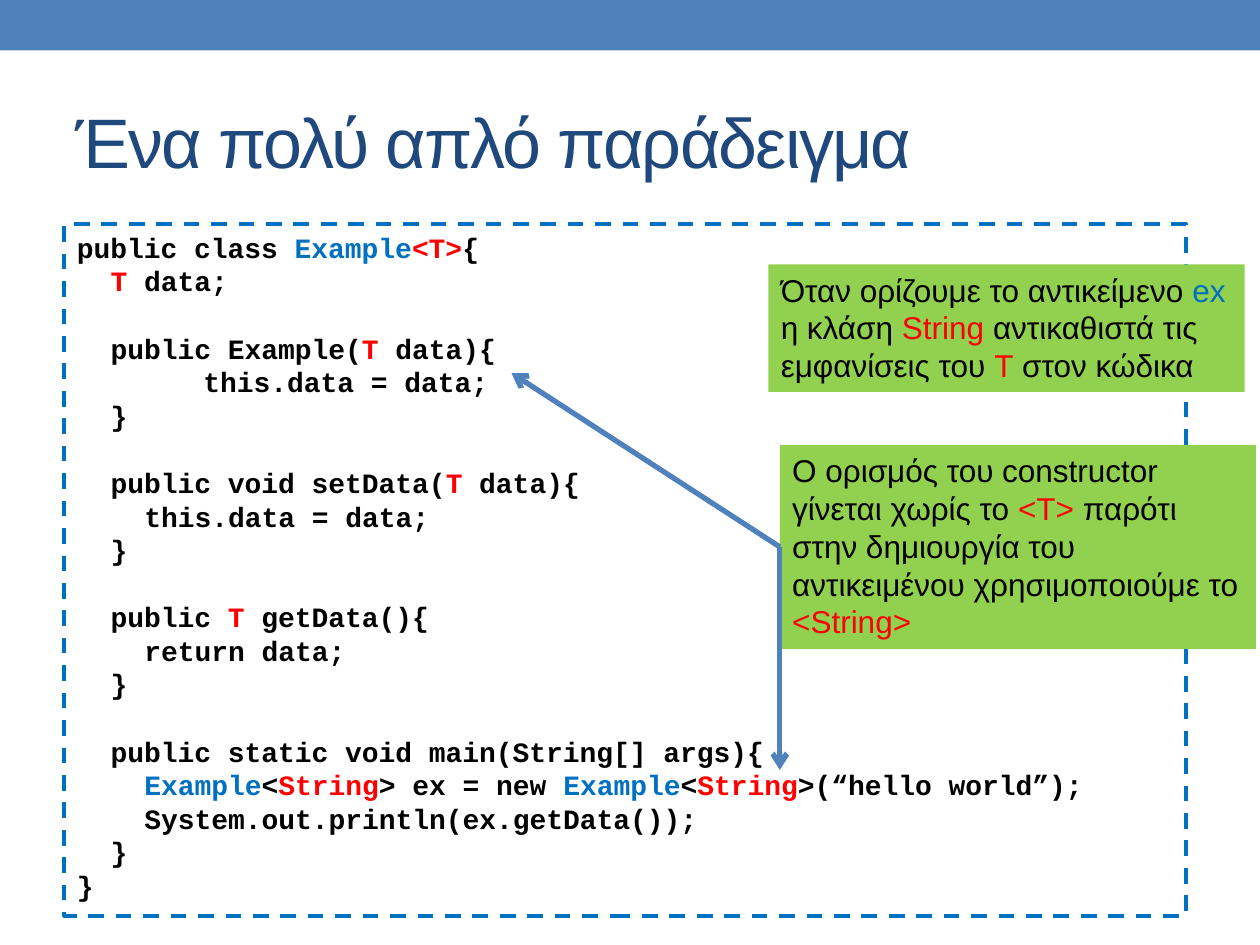
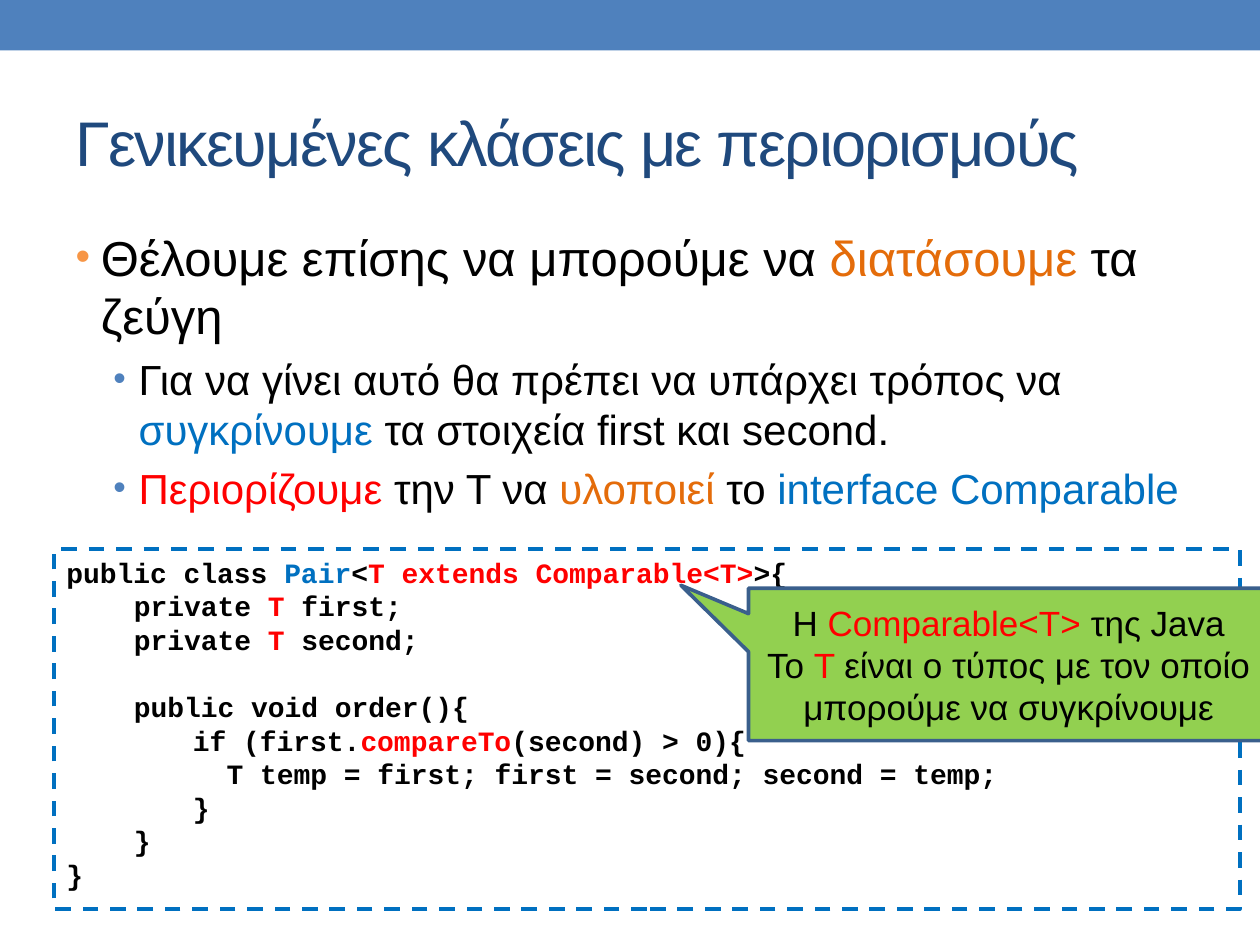
from lxml import etree
from pptx import Presentation
from pptx.dml.color import RGBColor
from pptx.enum.dml import MSO_LINE
from pptx.enum.shapes import MSO_CONNECTOR, MSO_SHAPE
from pptx.enum.text import MSO_ANCHOR, MSO_AUTO_SIZE, PP_ALIGN
from pptx.oxml.ns import qn
from pptx.util import Cm, Pt

RECT, CALLOUT = MSO_SHAPE.RECTANGLE, MSO_SHAPE.RECTANGULAR_CALLOUT
STRAIGHT, DASH = MSO_CONNECTOR.STRAIGHT, MSO_LINE.DASH
TOP, MIDDLE = MSO_ANCHOR.TOP, MSO_ANCHOR.MIDDLE
LEFT, CENTER = PP_ALIGN.LEFT, PP_ALIGN.CENTER
NO_FIT = MSO_AUTO_SIZE.NONE
TITLE_ONLY, TITLE_AND_BODY = 5, 1
LEFT_SIDE = 1

BAND, NAVY, BLUE, GREEN = "4F81BD", "1F497D", "0070C0", "92D050"
CALLOUT_EDGE, BULLET_ORANGE = "3A5F8C", "F79646"
# Text markup: "|" and one of these letters start a run of that colour
INKS = {"k": "000000", "b": BLUE, "r": "FF0000", "o": "E46C0A", "n": NAVY}
CODE_COLUMN = 0.34  # width in cm of one character of code
TAB = 7.5           # columns before a tab stop
LINE_PITCH = 1.2    # line height per point of text


def colour(hex_string):
    return RGBColor.from_string(hex_string)


def apply(target, formats):
    for name, value in formats.items():
        setattr(target, name, value)


def add_xml(parent, tag, **attributes):
    return etree.SubElement(parent, qn(tag), attributes)


class Deck:
    def __init__(self):
        self.prs = Presentation()
        apply(self.prs, {"slide_width": Cm(25.4), "slide_height": Cm(19.05)})
        self.slide = None

    def new_slide(self, layout, title, size):
        self.slide = self.prs.slides.add_slide(self.prs.slide_layouts[layout])
        self.box((0, 0, 25.4, 1.02), fill=BAND)
        heading = self.slide.shapes.title
        self.place(heading, (1.27, 1.47, 22.86, 2.74))
        self.frame(heading, MIDDLE)
        paragraph = heading.text_frame.paragraphs[0]
        self.fill_text(paragraph, "|n" + title, size)
        for run in paragraph.runs:
            run.font._element.set("spc", "-100")

    def place(self, shape, area):
        apply(shape, dict(zip(("left", "top", "width", "height"), map(Cm, area))))

    def frame(self, shape, anchor=TOP):
        apply(shape.text_frame, {"word_wrap": True, "auto_size": NO_FIT,
                                 "vertical_anchor": anchor})

    def fill_text(self, paragraph, marked_text, size, font="Arial", bold=False,
                  align=LEFT, before=0):
        apply(paragraph, {"alignment": align, "space_before": Pt(before),
                          "line_spacing": Pt(size * LINE_PITCH)})
        if not marked_text.startswith("|"):
            marked_text = "|k" + marked_text
        for part in marked_text.split("|")[1:]:
            run = paragraph.add_run()
            run.text = part[1:]
            apply(run.font, {"name": font, "size": Pt(size), "bold": bold})
            run.font.color.rgb = colour(INKS[part[0]])

    def paragraphs(self, shape, count):
        text = shape.text_frame
        return [text.paragraphs[0]] + [text.add_paragraph() for _ in range(count - 1)]

    def box(self, area, kind=RECT, fill=None, edge=None, width=2.25):
        shape = self.slide.shapes.add_shape(kind, *map(Cm, area))
        shape.shadow.inherit = False
        if fill:
            shape.fill.solid()
            shape.fill.fore_color.rgb = colour(fill)
        else:
            shape.fill.background()
        if edge:
            shape.line.color.rgb = colour(edge)
            shape.line.width = Pt(width)
        else:
            shape.line.fill.background()
        self.frame(shape)
        return shape

    def code(self, area, rows):
        """Rows are (indent in columns, marked text); None leaves a line free."""
        listing = self.box(area, edge=BLUE)
        listing.line.dash_style = DASH
        size, gap = 16, 0
        lines = iter(self.paragraphs(listing, len(rows) - rows.count(None)))
        for row in rows:
            if row is None:
                gap = size * LINE_PITCH
                continue
            columns, text = row
            line = next(lines)
            self.fill_text(line, text, size, "Courier New", True, before=gap)
            line._p.get_or_add_pPr().set("marL", str(Cm(columns * CODE_COLUMN)))
            gap = 0

    def note(self, area, text):
        note = self.box(area, fill=GREEN)
        self.fill_text(note.text_frame.paragraphs[0], text, 18)
        return note

    def callout(self, area, tip, texts):
        callout = self.box(area, CALLOUT, GREEN, CALLOUT_EDGE, 2.08)
        for index, value in enumerate(tip):
            callout.adjustments[index] = value
        self.frame(callout, MIDDLE)
        for paragraph, text in zip(self.paragraphs(callout, len(texts)), texts):
            self.fill_text(paragraph, text, 20, align=CENTER)

    def arrow(self, source, start, end):
        arrow = self.slide.shapes.add_connector(STRAIGHT, *map(Cm, start + end))
        arrow.begin_connect(source, LEFT_SIDE)
        arrow.line.color.rgb = colour(BAND)
        arrow.line.width = Pt(3)
        properties = arrow._element.spPr
        add_xml(properties.find(qn("a:ln")), "a:tailEnd", type="arrow")
        add_xml(properties, "a:effectLst")

    def bullets(self, area, items):
        body = self.slide.placeholders[1]
        self.place(body, area)
        self.frame(body)
        styles = [(28, 0.51, BULLET_ORANGE), (24, 1.27, BAND)]
        for paragraph, (level, text) in zip(self.paragraphs(body, len(items)), items):
            size, margin, bullet_colour = styles[level]
            paragraph.level = level
            self.fill_text(paragraph, text, size, before=size * 0.2)
            props = paragraph._p.get_or_add_pPr()
            props.set("marL", str(Cm(margin)))
            props.set("indent", str(-Cm(0.51)))
            add_xml(add_xml(props, "a:buClr"), "a:srgbClr", val=bullet_colour)
            add_xml(props, "a:buSzPct", val="85000")
            add_xml(props, "a:buFont", typeface="Arial")
            add_xml(props, "a:buChar", char="•")


def simple_example(deck):
    deck.new_slide(TITLE_ONLY, "Ένα πολύ απλό παράδειγμα", 40)
    deck.code((1.3, 4.52, 22.61, 13.94), [
        (0, "public class |bExample|r<T>|k{"),
        (2, "|rT|k data;"),
        None,
        (2, "public Example(|rT|k data){"),
        (TAB, "this.data = data;"),
        (2, "}"),
        None,
        (2, "public void setData(|rT|k data){"),
        (4, "this.data = data;"),
        (2, "}"),
        None,
        (2, "public |rT |kgetData(){"),
        (4, "return data;"),
        (2, "}"),
        None,
        (2, "public static void main(String[] args){"),
        (4, "|bExample|k<|rString|k> ex = new |bExample|k<|rString|k>(“hello world”);"),
        (4, "System.out.println(ex.getData());"),
        (2, "}"),
        (0, "}"),
    ])
    # Notes on the type parameter and the constructor
    deck.note((15.49, 5.33, 9.6, 2.57),
              "Όταν ορίζουμε το αντικείμενο |bex |kη κλάση |rString |k"
              "αντικαθιστά τις εμφανίσεις του |rΤ|k στον κώδικα")
    constructor_note = deck.note(
        (15.72, 8.97, 9.6, 4.11),
        "Ο ορισμός του constructor γίνεται χωρίς το |r<Τ> |kπαρότι στην "
        "δημιουργία του αντικειμένου χρησιμοποιούμε το |r<String>")
    for target in ((10.31, 7.52), (15.72, 15.52)):
        deck.arrow(constructor_note, (15.72, 11.02), target)


def bounded_classes(deck):
    deck.new_slide(TITLE_AND_BODY, "Γενικευμένες κλάσεις με περιορισμούς", 36)
    deck.bullets((1.27, 4.45, 22.86, 13.54), [
        (0, "Θέλουμε επίσης να μπορούμε να |oδιατάσουμε|k τα ζεύγη"),
        (1, "Για να γίνει αυτό θα πρέπει να υπάρχει τρόπος να "
            "|bσυγκρίνουμε|k τα στοιχεία first και second."),
        (1, "|rΠεριορίζουμε|k την Τ να |oυλοποιεί|k το |binterface Comparable"),
    ])
    deck.code((1.09, 11.07, 23.9, 7.26), [
        (0, "public class |bPair|k<|rT extends Comparable<Τ>|k>{"),
        (4, "private |rT|k first;"),
        (4, "private |rT|k second;"),
        None,
        (4, "public void order(){"),
        (TAB, "if (first.|rcompareTo|k(second) > 0){"),
        (TAB + 2, "T temp = first; first = second; second = temp;"),
        (TAB, "}"),
        (4, "}"),
        (0, "}"),
    ])
    # Explanation of the bound
    deck.callout((15.09, 11.86, 10.49, 3.07), (-0.63, -0.52), [
        "H |rComparable<Τ> |kτης Java",
        "To |rT |kείναι ο τύπος με τον οποίο μπορούμε να συγκρίνουμε",
    ])


def main():
    deck = Deck()
    simple_example(deck)
    bounded_classes(deck)
    deck.prs.save("out.pptx")


if __name__ == "__main__":
    main()
